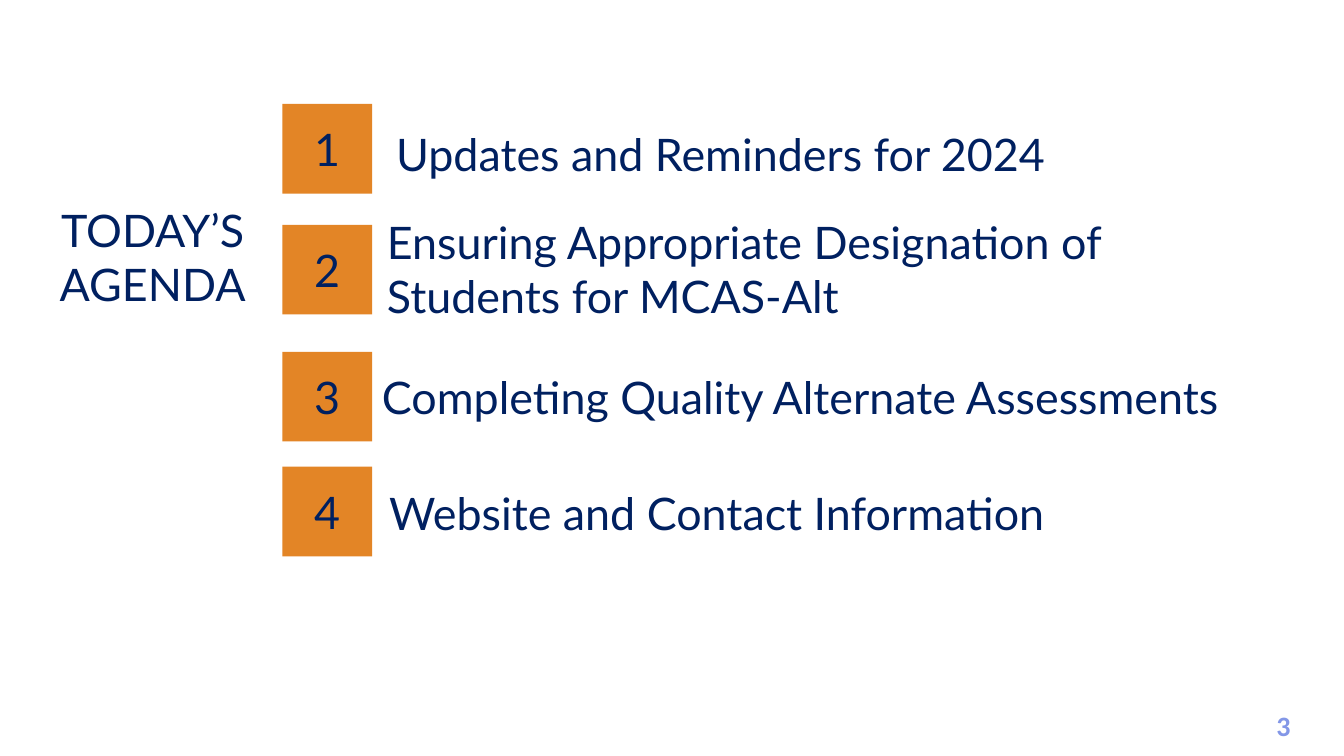
from pptx import Presentation
from pptx.dml.color import RGBColor
from pptx.enum import shapes, text
from pptx.util import Inches, Pt

NAVY, ORANGE, PERIWINKLE = "002060", "E38526", "8397E7"
MARKER_SIZE = 0.89

# Marker top, then label box (left, top, width, height) and wording
AGENDA = [
    (1.03, (3.83, 1.08, 8.83, 0.89), "Updates and Reminders for 2024"),
    (2.23, (3.74, 2.22, 8.9, 0.89),
     "Ensuring Appropriate Designation of Students for MCAS-Alt"),
    (3.49, (3.69, 3.49, 8.9, 0.89), "Completing Quality Alternate Assessments"),
    (4.63, (3.76, 4.77, 7.18, 0.64), "Website and Contact Information"),
]


def color(hex_code):
    return RGBColor.from_string(hex_code)


def inches(box):
    return [Inches(length) for length in box]


def write(holder, words, align, anchor, size=32, font="Lato", ink=NAVY, bold=False):
    frame = holder.text_frame
    frame.word_wrap = True
    frame.auto_size = text.MSO_AUTO_SIZE.NONE
    frame.vertical_anchor = anchor
    paragraph = frame.paragraphs[0]
    paragraph.alignment = align
    run = paragraph.add_run()
    run.text = words
    run.font.size = Pt(size)
    run.font.name = font
    run.font.bold = bold
    run.font.color.rgb = color(ink)


def add_heading(slide, box):
    heading = slide.shapes.title
    heading.left, heading.top, heading.width, heading.height = inches(box)
    write(heading, "TODAY’S AGENDA", text.PP_ALIGN.CENTER, text.MSO_ANCHOR.TOP)


def add_marker(slide, number, box):
    marker = slide.shapes.add_shape(shapes.MSO_SHAPE.RECTANGLE, *inches(box))
    marker.shadow.inherit = False
    marker.fill.solid()
    marker.fill.fore_color.rgb = color(ORANGE)
    marker.line.fill.background()
    write(marker, str(number), text.PP_ALIGN.CENTER, text.MSO_ANCHOR.MIDDLE)


def add_agenda(slide, left):
    for number, (top, label_box, topic) in enumerate(AGENDA, start=1):
        add_marker(slide, number, (left, top, MARKER_SIZE, MARKER_SIZE))
        label = slide.shapes.add_textbox(*inches(label_box))
        write(label, topic, text.PP_ALIGN.LEFT, text.MSO_ANCHOR.MIDDLE)


def add_page_number(slide, box):
    page_number = slide.shapes.add_textbox(*inches(box))
    write(page_number, "3", text.PP_ALIGN.CENTER, text.MSO_ANCHOR.TOP,
          size=20, font="Calibri", ink=PERIWINKLE, bold=True)


def main():
    deck = Presentation()
    deck.slide_width, deck.slide_height = Inches(13.33), Inches(7.5)
    slide = deck.slides.add_slide(deck.slide_layouts.get_by_name("Title Only"))
    add_heading(slide, (0, 1.96, 3.03, 1.18))
    add_agenda(slide, left=2.8)
    add_page_number(slide, (12.42, 6.98, 0.62, 0.44))
    deck.save("out.pptx")


if __name__ == "__main__":
    main()
